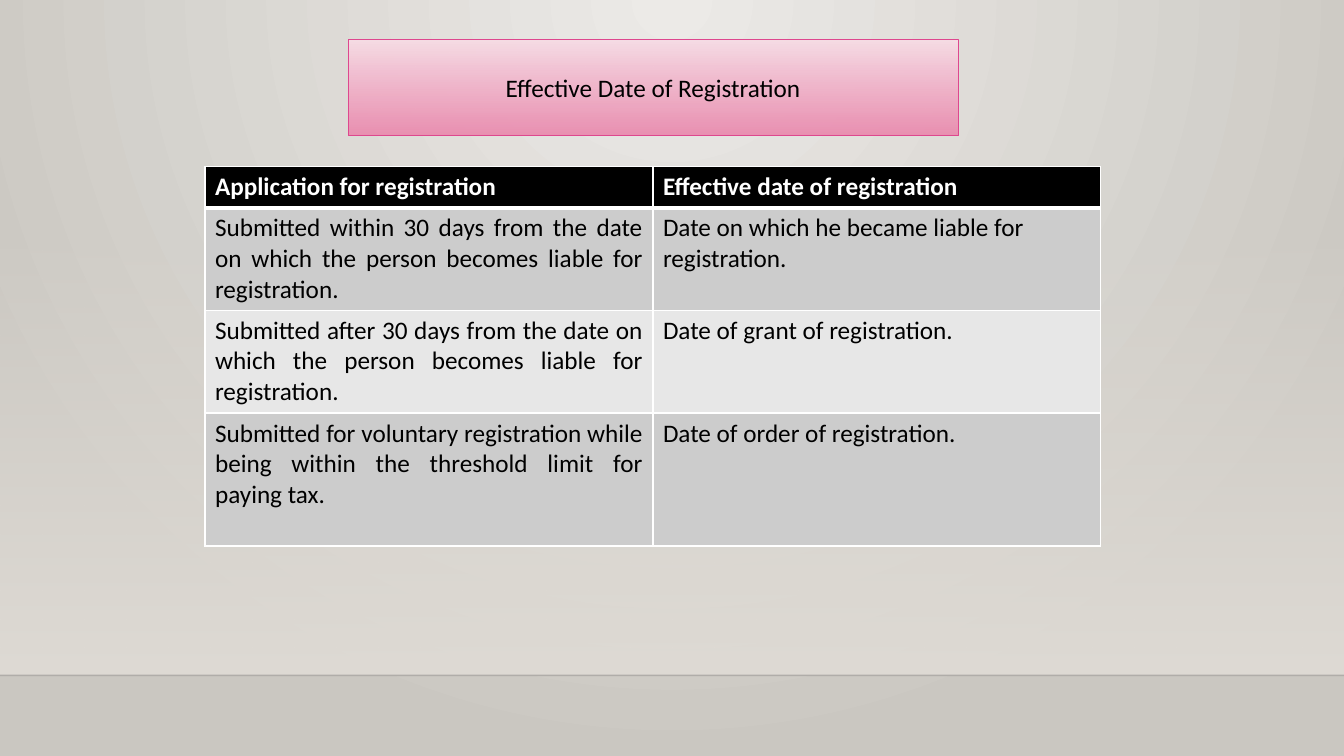
"""Build the slide on the effective date of registration."""
from lxml import etree
from pptx import Presentation
from pptx import util as u
from pptx.dml import color
from pptx.enum import shapes, text
from pptx.oxml import ns

theme = {
    "face": "Calibri", "size": 18,
    "dark": "000000", "light": "FFFFFF", "rule": "000001", "edge": "DE478E",
    "bands": ["CCCCCC", "E7E7E7"],
    "back": [("ECEAE7", 100), ("CAC7C1", 100)],
    "floor": [("DFDBD5", 0), ("DFDBD5", 100)],
    "pink": [("F7DCE5", 100), ("EA8AAE", 92)],
}
rows = [
    ("Application for registration", "Effective date of registration"),
    ("Submitted within 30 days from the date on which the person becomes liable for registration.",
     "Date on which he became liable for registration."),
    ("Submitted after 30 days from the date on which the person becomes liable for registration.",
     "Date of grant of registration."),
    ("Submitted for voluntary registration while being within the threshold limit for paying tax.",
     "Date of order of registration."),
]
highs = [29.6, 73, 73.5, 95]


def shade(fill, root, stops, shape):
    """Give a fill a two-stop gradient with the given shape element."""
    fill.gradient()
    grad = root.find(".//" + ns.qn("a:gradFill"))
    for part in list(grad):
        grad.remove(part)
    marks = "".join(
        f'<a:gs pos="{i * 100000}"><a:srgbClr val="{tint}"><a:alpha val="{solid * 1000}"/></a:srgbClr></a:gs>'
        for i, (tint, solid) in enumerate(stops))
    new = etree.fromstring(f'<a:x {ns.nsdecls("a")}><a:gsLst>{marks}</a:gsLst>{shape}</a:x>')
    grad.extend(list(new))


def write(frame, words, tint, bold, align):
    """Put one formatted paragraph into a text frame."""
    para = frame.paragraphs[0]
    para.text = words
    para.alignment = align
    font = para.runs[0].font
    look = {"name": theme["face"], "size": u.Pt(theme["size"]), "bold": bold}
    for key, val in look.items():
        setattr(font, key, val)
    font.color.rgb = color.RGBColor.from_string(tint)


deck = Presentation()
wide, high = u.Pt(960), u.Pt(540)
deck.slide_width, deck.slide_height = wide, high
slide = deck.slides.add_slide(deck.slide_layouts[5])
down = '<a:lin ang="5400000" scaled="0"/>'
glow = '<a:path path="circle"><a:fillToRect l="43000" t="0" r="43000" b="100000"/></a:path>'
shade(slide.background.fill, slide.element, theme["back"], glow)

base = u.Pt(482.4)
floor = slide.shapes.add_shape(shapes.MSO_SHAPE.RECTANGLE, 0, u.Pt(159), wide, base - u.Pt(159))
floor.shadow.inherit = False
floor.line.fill.background()
shade(floor.fill, floor.element, theme["floor"], down)

rule = slide.shapes.add_connector(shapes.MSO_CONNECTOR.STRAIGHT, 0, base, wide, base)
rule.line.width = u.Pt(1)
rule.line.color.rgb = color.RGBColor.from_string(theme["rule"])
tone = rule.element.find(".//" + ns.qn("a:srgbClr"))
etree.SubElement(tone, ns.qn("a:alpha"), val="20000")
etree.SubElement(rule.element.spPr, ns.qn("a:effectLst"))

title = slide.shapes.title
place = {"left": 248.6, "top": 28.2, "width": 435.8, "height": 68.4}
for key, val in place.items():
    setattr(title, key, u.Pt(val))
shade(title.fill, title.element, theme["pink"], down)
title.line.width = u.Pt(0.75)
title.line.color.rgb = color.RGBColor.from_string(theme["edge"])
frame = title.text_frame
setup = {"word_wrap": True, "auto_size": text.MSO_AUTO_SIZE.NONE,
         "vertical_anchor": text.MSO_ANCHOR.MIDDLE}
for key, val in setup.items():
    setattr(frame, key, val)
write(frame, "Effective Date of Registration", theme["dark"], False, text.PP_ALIGN.CENTER)

grid = slide.shapes.add_table(len(rows), 2, u.Pt(146.4), u.Pt(118.8), u.Pt(640), u.Pt(sum(highs))).table
for r, (row, tall) in enumerate(zip(rows, highs)):
    grid.rows[r].height = u.Pt(tall)
    head = r == 0
    for c, words in enumerate(row):
        cell = grid.cell(r, c)
        props = cell._tc.get_or_add_tcPr()
        sides = {"L": 1, "R": 1, "T": 3 if r == 1 else 1, "B": 3 if head else 1}
        for side, thick in sides.items():
            line = etree.SubElement(props, ns.qn("a:ln" + side), w=str(u.Pt(thick)))
            fill = etree.SubElement(line, ns.qn("a:solidFill"))
            etree.SubElement(fill, ns.qn("a:srgbClr"), val=theme["light"])
        cell.fill.solid()
        tint = theme["dark"] if head else theme["bands"][(r - 1) % 2]
        cell.fill.fore_color.rgb = color.RGBColor.from_string(tint)
        align = text.PP_ALIGN.LEFT if head or c else text.PP_ALIGN.JUSTIFY
        write(cell.text_frame, words, theme["light" if head else "dark"], head, align)

deck.save("out.pptx")
